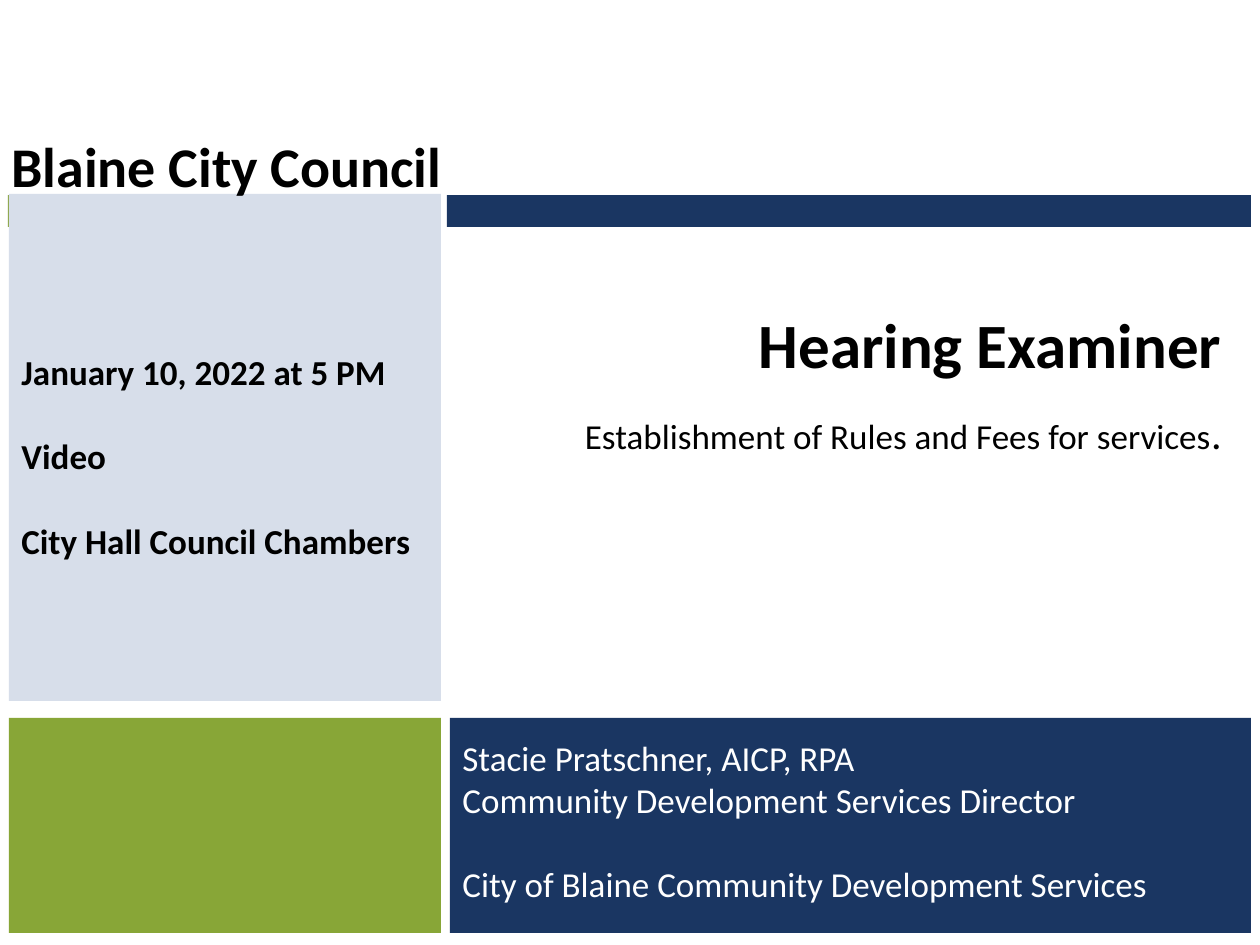
from pptx import Presentation
from pptx.dml.color import RGBColor
from pptx.enum.shapes import MSO_SHAPE
from pptx.enum.text import PP_ALIGN
from pptx.util import Emu, Pt

NAVY = RGBColor(0x1A, 0x36, 0x62)
GREEN = RGBColor(0x88, 0xA6, 0x37)
BAR_GREEN = RGBColor(0x86, 0xA1, 0x3C)
PALE_BLUE = RGBColor(0xD7, 0xDE, 0xEA)
BLACK = RGBColor(0x00, 0x00, 0x00)
WHITE = RGBColor(0xFF, 0xFF, 0xFF)
FONT = "Calibri"
PIXELS_PER_INCH = 126
BLANK_LINE = 24.4


def px(length):
    """Turn a length in pixels into EMU."""
    return Emu(round(length * 914400 / PIXELS_PER_INCH))


def add_panel(slide, left, top, width, height, color):
    """Add a plain filled rectangle without an outline."""
    shape = slide.shapes.add_shape(
        MSO_SHAPE.RECTANGLE, px(left), px(top), px(width), px(height)
    )
    shape.shadow.inherit = False
    shape.fill.solid()
    shape.fill.fore_color.rgb = color
    shape.line.fill.background()


def add_run(paragraph, text, size, color, bold):
    """Append one formatted run to a paragraph."""
    run = paragraph.add_run()
    run.text = text
    run.font.name = FONT
    run.font.size = Pt(size)
    run.font.bold = bold
    run.font.color.rgb = color


def add_text(slide, box, paragraphs, color=BLACK, bold=False, align=PP_ALIGN.LEFT):
    """Add a text box from (space before, [(text, size), ...]) paragraphs."""
    shape = slide.shapes.add_textbox(*map(px, box))
    frame = shape.text_frame
    frame.word_wrap = True
    for index, (space_before, runs) in enumerate(paragraphs):
        paragraph = frame.add_paragraph() if index else frame.paragraphs[0]
        paragraph.alignment = align
        paragraph.space_before = Pt(space_before)
        for text, size in runs:
            add_run(paragraph, text, size, color, bold)


def main():
    """Build and save the title slide."""
    presentation = Presentation()
    presentation.slide_width = px(1260)
    presentation.slide_height = px(945)
    slide = presentation.slides.add_slide(presentation.slide_layouts[6])

    add_panel(slide, 447, 195, 804, 32, NAVY)
    add_panel(slide, 8, 195, 212, 32, BAR_GREEN)
    add_panel(slide, 450, 718, 801, 215, NAVY)
    add_panel(slide, 9, 718, 432, 215, GREEN)
    add_panel(slide, 9, 194, 432, 507, PALE_BLUE)

    add_text(
        slide, (467, 299, 767, 90), [(0, [("Hearing Examiner", 36)])],
        bold=True, align=PP_ALIGN.RIGHT,
    )
    add_text(
        slide, (450, 730, 723, 183),
        [
            (0, [("Stacie Pratschner, AICP, RPA", 20)]),
            (0, [("Community Development Services Director", 20)]),
            (BLANK_LINE, [("City of Blaine Community Development Services", 20)]),
        ],
        color=WHITE,
    )
    add_text(
        slide, (9, 344, 432, 267),
        [
            (0, [("January 10, 2022 at 5 PM", 20)]),
            (BLANK_LINE, [("Video", 20)]),
            (BLANK_LINE, [("City Hall Council Chambers", 20)]),
        ],
        bold=True,
    )
    add_text(
        slide, (-1, 125, 1252, 81), [(0, [("Blaine City Council", 32)])], bold=True
    )
    add_text(
        slide, (509, 401, 725, 63),
        [(0, [("Establishment of Rules and Fees for services", 20), (".", 24)])],
        align=PP_ALIGN.RIGHT,
    )

    presentation.save("out.pptx")


if __name__ == "__main__":
    main()
